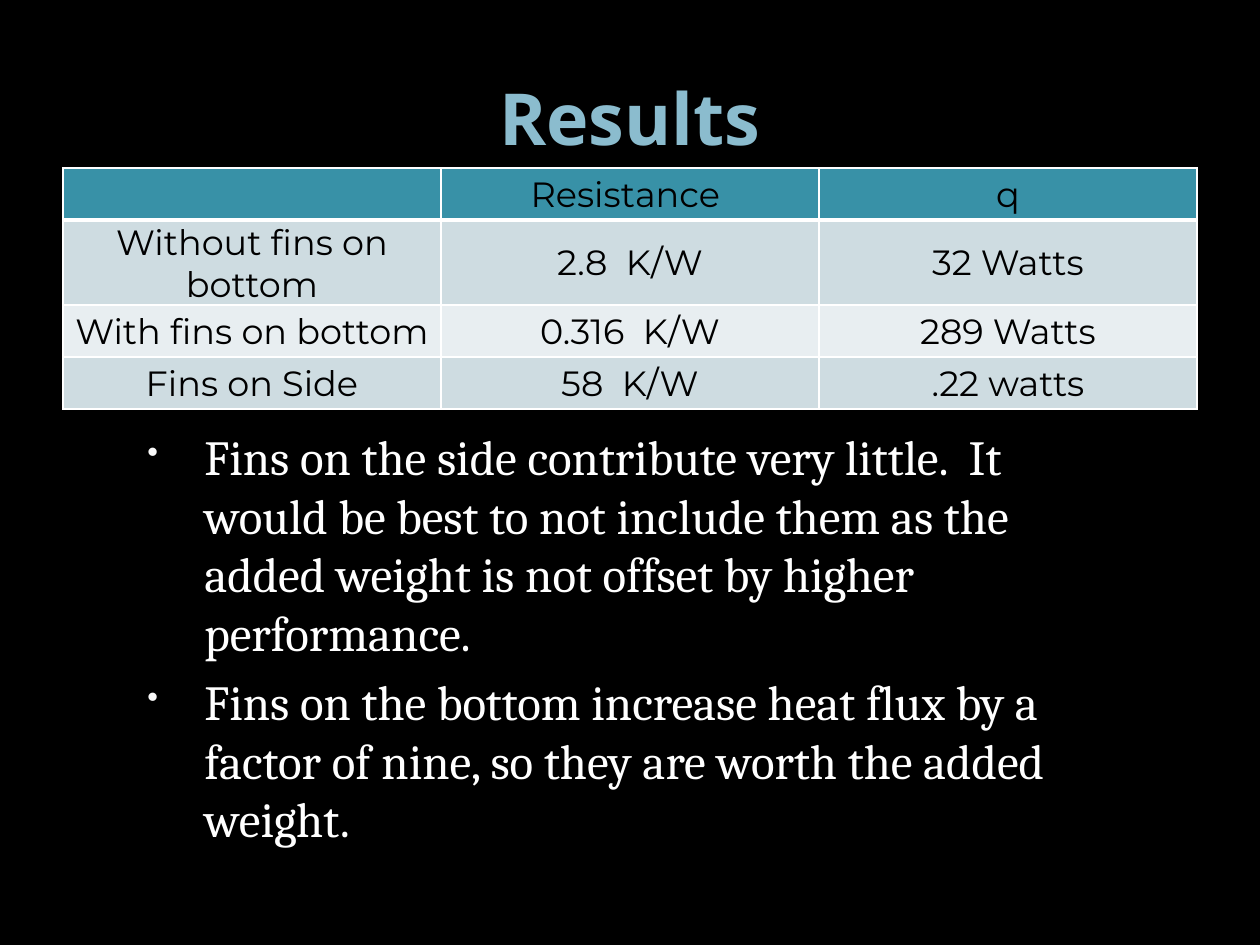
from dataclasses import dataclass

from lxml import etree
from pptx import Presentation
from pptx.dml.color import RGBColor
from pptx.enum.text import MSO_ANCHOR, PP_ALIGN
from pptx.oxml import parse_xml
from pptx.oxml.ns import nsdecls, qn
from pptx.util import Emu, Pt

MIDDLE, TOP = MSO_ANCHOR.MIDDLE, MSO_ANCHOR.TOP
CENTER, LEFT = PP_ALIGN.CENTER, PP_ALIGN.LEFT
EMU_PER_PX = 914400 / 126


@dataclass(frozen=True)
class Theme:
    """Colours, fonts and type sizes of the slide."""
    background: str = "000000"
    title: str = "8BBCCE"
    body: str = "FFFFFF"
    bullet: str = "F9F9F9"
    cell_text: str = "000000"
    header_fill: str = "3891A7"
    band_fills: tuple = ("CEDCE1", "E8EEF1")
    border: str = "FFFFFF"
    title_font: str = "Open Sans"
    table_font: str = "Montserrat"
    body_font: str = "Cambria"
    title_size: int = 41
    table_size: int = 20
    body_size: int = 28


THEME = Theme()
RESULTS = [
    ("", "Resistance ", "q"),
    ("Without fins on bottom", "2.8  K/W", "32 Watts"),
    ("With fins on bottom", "0.316  K/W", "289 Watts"),
    ("Fins on Side", "58  K/W", ".22 watts"),
]
CONCLUSIONS = [
    "Fins on the side contribute very little.  It would be best to not include "
    "them as the added weight is not offset by higher performance.",
    "Fins on the bottom increase heat flux by a factor of nine, so they are "
    "worth the added weight.",
]


def px(length):
    """Turn pixels into EMU."""
    return Emu(round(length * EMU_PER_PX))


def set_attributes(target, values):
    """Set every attribute named in values."""
    for name, value in values.items():
        setattr(target, name, value)


def write_paragraph(paragraph, text, font, size, color, bold=False, alignment=LEFT):
    """Write one formatted run into a paragraph."""
    paragraph.alignment = alignment
    run = paragraph.add_run()
    run.text = text
    set_attributes(run.font, {"name": font, "size": Pt(size), "bold": bold})
    run.font.color.rgb = RGBColor.from_string(color)


def add_text_frame(slide, box, anchor):
    """Add a wrapping text box and return its text frame."""
    frame = slide.shapes.add_textbox(*map(px, box)).text_frame
    set_attributes(frame, {"word_wrap": True, "vertical_anchor": anchor})
    return frame


def add_title(slide, box, text):
    """Add the centred slide title."""
    frame = add_text_frame(slide, box, MIDDLE)
    write_paragraph(frame.paragraphs[0], text, THEME.title_font, THEME.title_size,
                    THEME.title, bold=True, alignment=CENTER)


def set_borders(cell, widths):
    """Draw the cell borders from a dict of side and points."""
    properties = cell._tc.get_or_add_tcPr()
    for side, width in widths.items():
        properties.append(parse_xml(
            f'<a:ln{side} {nsdecls("a")} w="{Pt(width)}"><a:solidFill>'
            f'<a:srgbClr val="{THEME.border}"/></a:solidFill></a:ln{side}>'))


def add_results_table(slide, box, rows):
    """Add the banded table with equal columns and a header row."""
    left, top, width, row_height = box
    table = slide.shapes.add_table(
        len(rows), len(rows[0]), px(left), px(top), px(width),
        px(row_height * len(rows))).table
    margins = {"margin_left": px(1), "margin_right": px(1),
               "margin_top": px(1), "margin_bottom": 0}
    for row_index, values in enumerate(rows):
        is_header = row_index == 0
        fill = THEME.header_fill if is_header else THEME.band_fills[(row_index - 1) % 2]
        widths = {"L": 1, "R": 1, "T": 3 if row_index == 1 else 1,
                  "B": 3 if is_header else 1}
        for column_index, text in enumerate(values):
            cell = table.cell(row_index, column_index)
            set_attributes(cell, {**margins, "vertical_anchor": MIDDLE})
            set_borders(cell, widths)
            cell.fill.solid()
            cell.fill.fore_color.rgb = RGBColor.from_string(fill)
            if text:
                write_paragraph(cell.text_frame.paragraphs[0], text, THEME.table_font,
                                THEME.table_size, THEME.cell_text, alignment=CENTER)


def set_bullet(paragraph, indent, hanging):
    """Give a paragraph a small bullet, a hanging indent and space before."""
    properties = paragraph._p.get_or_add_pPr()
    properties.set("marL", str(px(indent)))
    properties.set("indent", str(-px(hanging)))
    spacing = etree.SubElement(properties, qn("a:spcBef"))
    etree.SubElement(spacing, qn("a:spcPct"), val="20000")
    color = etree.SubElement(properties, qn("a:buClr"))
    etree.SubElement(color, qn("a:srgbClr"), val=THEME.bullet)
    etree.SubElement(properties, qn("a:buSzPct"), val="65000")
    etree.SubElement(properties, qn("a:buChar"), char="•")


def add_conclusions(slide, box, texts):
    """Add the bulleted conclusions."""
    frame = add_text_frame(slide, box, TOP)
    for index, text in enumerate(texts):
        paragraph = frame.add_paragraph() if index else frame.paragraphs[0]
        write_paragraph(paragraph, text, THEME.body_font, THEME.body_size, THEME.body)
        set_bullet(paragraph, indent=76, hanging=57)


def main():
    """Build and save the results slide."""
    presentation = Presentation()
    set_attributes(presentation, {"slide_width": px(1260), "slide_height": px(945)})
    slide = presentation.slides.add_slide(presentation.slide_layouts[6])
    slide.background.fill.solid()
    slide.background.fill.fore_color.rgb = RGBColor.from_string(THEME.background)
    add_title(slide, (63, 38, 1134, 158), "Results")
    add_results_table(slide, (63, 168, 1134, 52), RESULTS)
    add_conclusions(slide, (116, 420, 966, 440), CONCLUSIONS)
    presentation.save("out.pptx")


if __name__ == "__main__":
    main()
